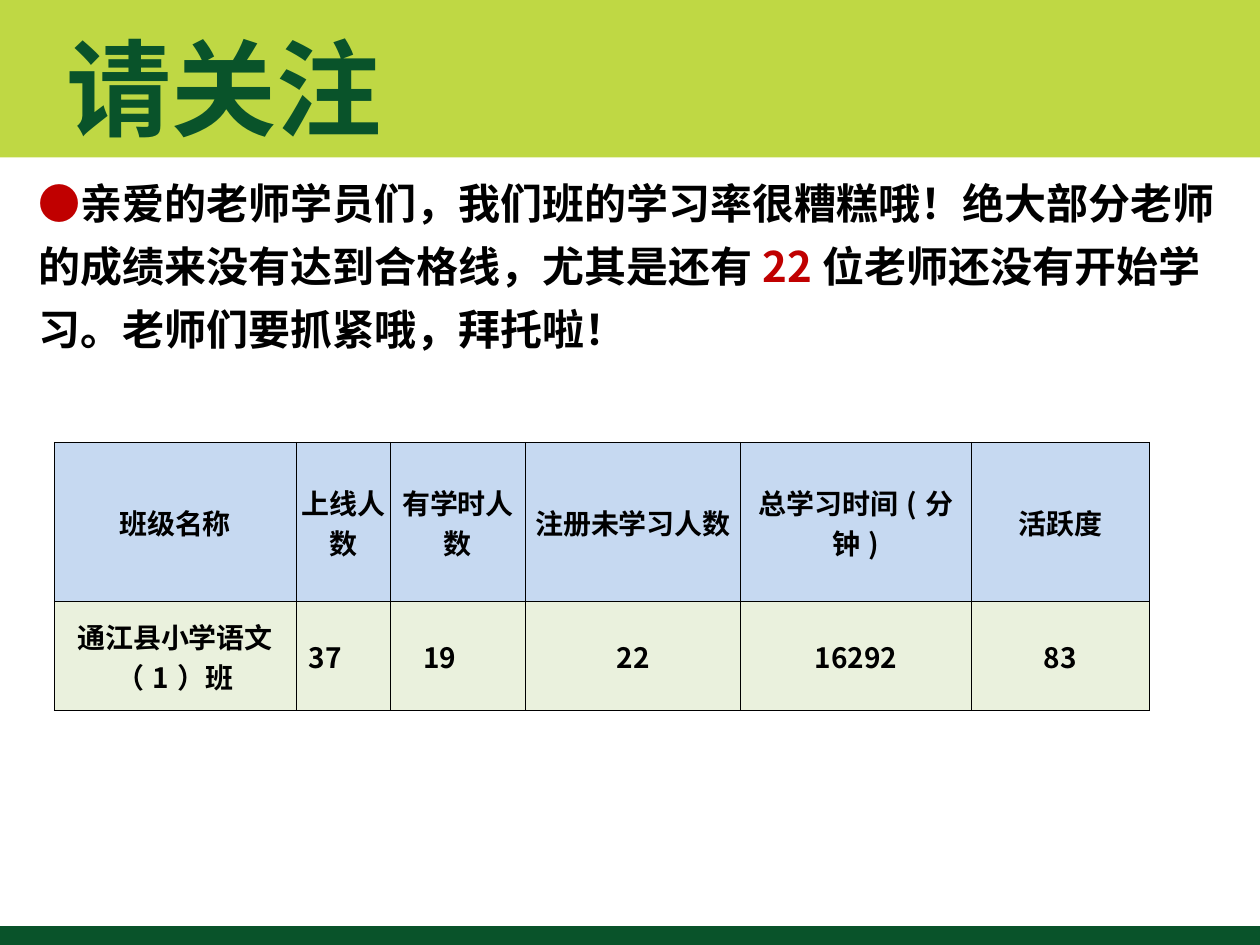
from lxml.etree import SubElement
from pptx import Presentation
from pptx.dml.color import RGBColor as Rgb
from pptx.enum.shapes import MSO_SHAPE as Shape
from pptx.enum.text import MSO_ANCHOR as Anchor, PP_ALIGN as Align
from pptx.oxml.ns import qn
from pptx.util import Inches, Pt

WIDE, HIGH = 10, 7.5
FONT = "Noto Sans CJK SC"
HUES = {
    "lime": "BFD844", "green": "09532A", "red": "C00000",
    "black": "000000", "blue": "C6D9F1", "pale": "EAF1DD",
}
COLS = [1.92, 0.75, 1.07, 1.71, 1.83, 1.41]
ROWS = [1.26, 0.87]
CELLS = [
    ["班级名称", "上线人数", "有学时人数", "注册未学习人数", "总学习时间(分钟)", "活跃度"],
    ["通江县小学语文（1）班", "37　", "19　", "22", "16292", "83"],
]
NOTE = [
    ("●", "red"),
    ("亲爱的老师学员们，我们班的学习率很糟糕哦！绝大部分老师的成绩来没有达到合格线，尤其是还有", "black"),
    ("22", "red"),
    ("位老师还没有开始学习。老师们要抓紧哦，拜托啦！", "black"),
]


def hue(name):
    return Rgb.from_string(HUES[name])


def place(box):
    return [Inches(n) for n in box]


def add_run(para, text, size, color):
    run = para.add_run()
    run.text = text
    font = run.font
    font.size, font.bold, font.name = Pt(size), True, FONT
    font.color.rgb = hue(color)
    SubElement(font._element, qn("a:ea")).set("typeface", FONT)


def add_band(slide, box, color):
    band = slide.shapes.add_shape(Shape.RECTANGLE, *place(box))
    band.shadow.inherit = False
    band.fill.solid()
    band.fill.fore_color.rgb = hue(color)
    band.line.fill.background()


def add_text(slide, box, runs, size, anchor=Anchor.TOP, pitch=1.0):
    frame = slide.shapes.add_textbox(*place(box)).text_frame
    frame.word_wrap = True
    frame.vertical_anchor = anchor
    para = frame.paragraphs[0]
    para.line_spacing = pitch
    for text, color in runs:
        add_run(para, text, size, color)
    return frame


def add_edges(cell):
    # Borders come before the fill in the cell properties
    props = cell._tc.get_or_add_tcPr()
    for side in ("lnL", "lnR", "lnT", "lnB"):
        line = SubElement(props, qn("a:" + side), w=str(Pt(0.5)))
        fill = SubElement(line, qn("a:solidFill"))
        SubElement(fill, qn("a:srgbClr"), val=HUES["black"])


def fill_cell(cell, text, color):
    add_edges(cell)
    cell.fill.solid()
    cell.fill.fore_color.rgb = hue(color)
    cell.vertical_anchor = Anchor.MIDDLE
    cell.margin_left = cell.margin_right = cell.margin_top = Inches(0.01)
    cell.margin_bottom = 0
    para = cell.text_frame.paragraphs[0]
    para.alignment = Align.CENTER
    add_run(para, text, 16, "black")


def add_stats(slide, box):
    grid = slide.shapes.add_table(len(ROWS), len(COLS), *place(box)).table
    for col, part in zip(grid.columns, COLS):
        col.width = Inches(box[2] * part / sum(COLS))
    for row, part in zip(grid.rows, ROWS):
        row.height = Inches(box[3] * part / sum(ROWS))
    for r, (texts, color) in enumerate(zip(CELLS, ("blue", "pale"))):
        for c, text in enumerate(texts):
            fill_cell(grid.cell(r, c), text, color)


def main():
    deck = Presentation()
    deck.slide_width, deck.slide_height = Inches(WIDE), Inches(HIGH)
    slide = deck.slides.add_slide(deck.slide_layouts[6])

    # Top and bottom bands
    add_band(slide, (0, 0, WIDE, HIGH / 6), "lime")
    add_band(slide, (0, HIGH * 0.98, WIDE, HIGH * 0.02), "green")

    # Message, class figures and title
    note = add_text(slide, (0.21, 1.23, 9.66, 5.06), NOTE, 24, pitch=1.25)
    note.margin_top = Inches(0.08)
    add_stats(slide, (0.43, 3.51, sum(COLS), sum(ROWS)))
    add_text(slide, (0.43, 0.21, 3.12, 0.95), [("请关注", "green")], 60, Anchor.MIDDLE)

    deck.save("out.pptx")


if __name__ == "__main__":
    main()
